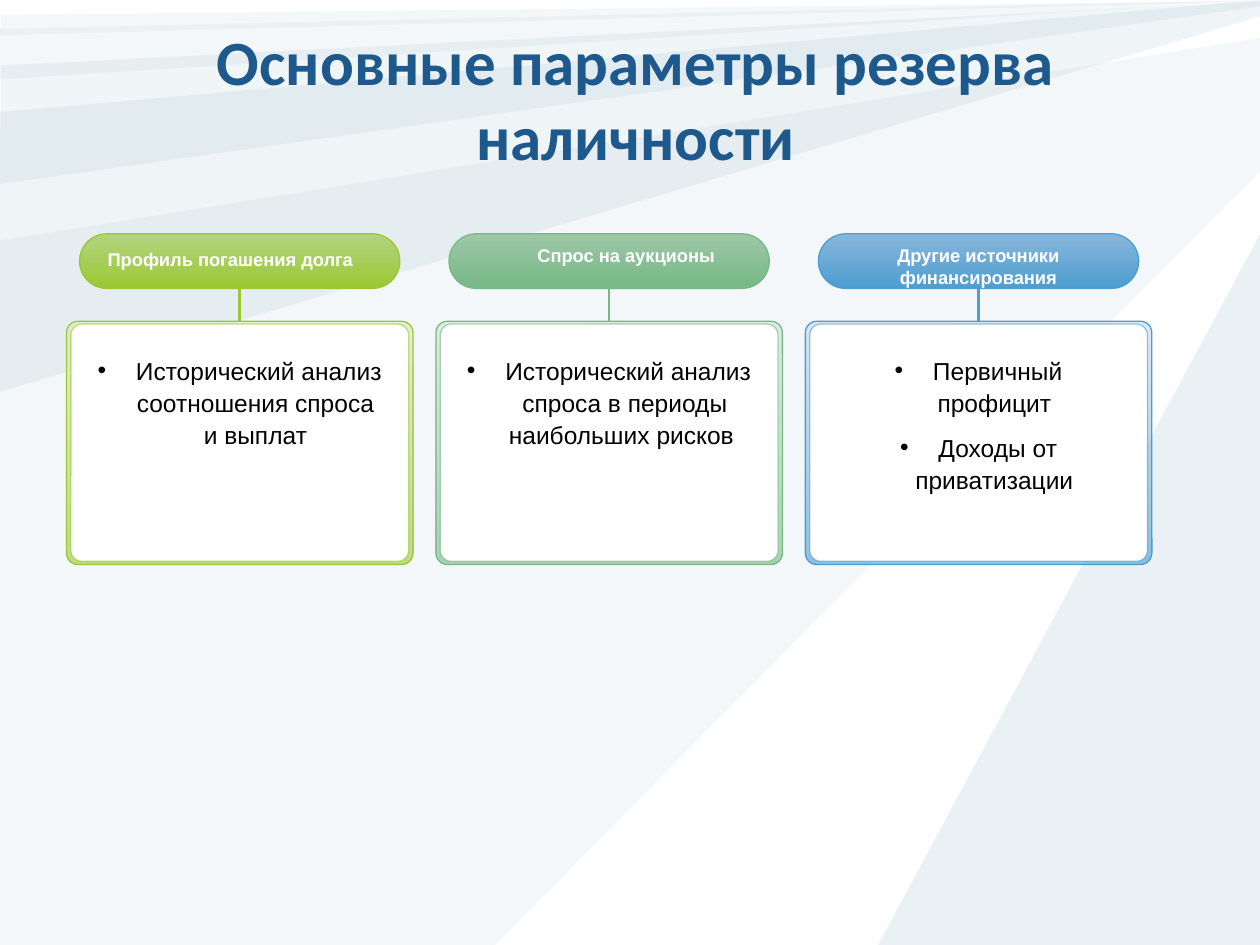
"""Build a slide on the main parameters of a cash reserve."""
from lxml import etree
from pptx import Presentation
from pptx.dml.color import RGBColor
from pptx.enum.shapes import MSO_CONNECTOR, MSO_SHAPE
from pptx.enum.text import MSO_ANCHOR, PP_ALIGN
from pptx.oxml.ns import qn
from pptx.util import Pt

ROUNDED = MSO_SHAPE.ROUNDED_RECTANGLE
STRAIGHT = MSO_CONNECTOR.STRAIGHT
CENTER = PP_ALIGN.CENTER
TOP, MIDDLE = MSO_ANCHOR.TOP, MSO_ANCHOR.MIDDLE

WHITE = RGBColor(0xFF, 0xFF, 0xFF)
BLACK = RGBColor(0, 0, 0)
NAVY = RGBColor(0x1E, 0x59, 0x8E)
RAY = RGBColor(0x97, 0xBA, 0xC9)
GREEN = RGBColor(0x9A, 0xC8, 0x32)
GREEN_MID = RGBColor(0xB3, 0xD4, 0x81)
GREEN_PALE = RGBColor(0xDB, 0xE9, 0xC8)
TEAL = RGBColor(0x76, 0xB8, 0x86)
TEAL_MID = RGBColor(0x9D, 0xC8, 0xA6)
TEAL_PALE = RGBColor(0xD2, 0xE4, 0xD5)
BLUE = RGBColor(0x4C, 0x9E, 0xD0)
BLUE_MID = RGBColor(0x89, 0xB6, 0xDA)
BLUE_PALE = RGBColor(0xCB, 0xDC, 0xEC)

TITLE = "Основные параметры резерва наличности"
RAYS = [
    (10, [(720, 21.6), (0, 137.5), (0, 540), (283, 540), (720, 97.9)]),
    (20, [(720, 133.9), (501.8, 540), (720, 540)]),
    (10, [(0.7, 8.6), (0, 20.2), (720, 0.7)]),
    (10, [(719.3, 0), (0, 45.4), (0, 16.6)]),
    (15, [(720, 9.4), (0, 223.9), (0, 64.1), (720, 0)]),
    (14, [(720, 0.7), (0.7, 37.4), (0, 105.1), (720, 3.6)]),
]
COLUMNS = [
    {"heading": "Профиль погашения долга", "heading_box": (48.2, 138.2, 167, 20.2),
     "points": [" Исторический анализ соотношения спроса и выплат"],
     "colors": (GREEN, GREEN_MID, GREEN_PALE)},
    {"heading": "Спрос на аукционы", "heading_box": (280.1, 136.1, 155.5, 20.9),
     "points": [" Исторический анализ спроса в периоды наибольших рисков "],
     "colors": (TEAL, TEAL_MID, TEAL_PALE)},
    {"heading": "Другие источники финансирования", "heading_box": (470.9, 136.1, 176.4, 32.4),
     "points": [" Первичный профицит", " Доходы от приватизации"],
     "colors": (BLUE, BLUE_MID, BLUE_PALE)},
]
FIRST_CENTER, COLUMN_PITCH = 137, 211.1
INDENT = 18


def set_opacity(element, percent):
    for color in element.iter(qn("a:srgbClr")):
        etree.SubElement(color, qn("a:alpha"), val=str(percent * 1000))


def add_ray(page, opacity, corners):
    points = [(Pt(x), Pt(y)) for x, y in corners]
    builder = page.shapes.build_freeform(*points[0])
    builder.add_line_segments(points[1:], close=True)
    ray = builder.convert_to_shape()
    ray.shadow.inherit = False
    ray.fill.solid()
    ray.fill.fore_color.rgb = RAY
    ray.line.fill.background()
    set_opacity(ray._element.spPr, opacity)


def add_text(page, bounds, lines, font, size, color, bold=False, anchor=TOP):
    box = page.shapes.add_textbox(*map(Pt, bounds))
    frame = box.text_frame
    frame.word_wrap = True
    frame.vertical_anchor = anchor
    frame.text = "\n".join(lines)
    for para in frame.paragraphs:
        para.alignment = CENTER
        for span in para.runs:
            span.font.name = font
            span.font.size = Pt(size)
            span.font.bold = bold
            span.font.color.rgb = color
    return box


def add_bullets(box):
    for number, para in enumerate(box.text_frame.paragraphs):
        para.line_spacing = 1.1
        para.space_before = Pt(7 if number else 0)
        properties = para._p.get_or_add_pPr()
        properties.set("marL", str(Pt(INDENT)))
        properties.set("indent", str(-Pt(INDENT)))
        etree.SubElement(properties, qn("a:buFont"), typeface="Arial")
        etree.SubElement(properties, qn("a:buChar"), char="•")


def add_panel(page, center, top, width, height, rounding, line_color, fill_colors):
    panel = page.shapes.add_shape(
        ROUNDED, Pt(center - width / 2), Pt(top), Pt(width), Pt(height))
    panel.adjustments[0] = rounding
    panel.shadow.inherit = False
    if len(fill_colors) == 1:
        panel.fill.solid()
        panel.fill.fore_color.rgb = fill_colors[0]
    else:
        panel.fill.gradient()
        panel.fill.gradient_angle = 270
        for stop, color, position in zip(panel.fill.gradient_stops, fill_colors, (0, 1)):
            stop.color.rgb = color
            stop.position = position
    panel.line.color.rgb = line_color
    panel.line.width = Pt(0.75)
    return panel


def add_link(page, pill, frame, color):
    link = page.shapes.add_connector(STRAIGHT, 0, 0, 0, 0)
    link.begin_connect(pill, 2)
    link.end_connect(frame, 0)
    link.line.color.rgb = color
    link.line.width = Pt(1.5)
    etree.SubElement(link._element.spPr, qn("a:effectLst"))


def add_column(page, center, column):
    main, middle, pale = column["colors"]
    frame = add_panel(page, center, 183.6, 198, 139, 0.047, main, (pale, main))
    set_opacity(frame._element.spPr.find(qn("a:gradFill")), 60)
    card = add_panel(page, center, 185.2, 193, 135.6, 0.047, main, (WHITE,))
    set_opacity(card._element.spPr.find(qn("a:ln")), 60)
    pill = add_panel(page, center, 133.6, 183, 31.2, 0.5, main, (middle, main))
    add_text(page, column["heading_box"], [column["heading"]], "Arial", 10.5, WHITE, bold=True)
    body = add_text(page, (center - 89, 198, 178, 93), column["points"], "Arial", 14, BLACK)
    add_bullets(body)
    add_link(page, pill, frame, main)


def main():
    deck = Presentation()
    deck.slide_width, deck.slide_height = Pt(720), Pt(540)
    page = deck.slides.add_slide(deck.slide_layouts[6])
    for opacity, corners in RAYS:
        add_ray(page, opacity, corners)
    add_text(page, (30.2, 18, 666, 75.6), [TITLE], "Calibri", 36, NAVY, bold=True, anchor=MIDDLE)
    for number, column in enumerate(COLUMNS):
        add_column(page, FIRST_CENTER + number * COLUMN_PITCH, column)
    deck.save("out.pptx")


if __name__ == "__main__":
    main()
